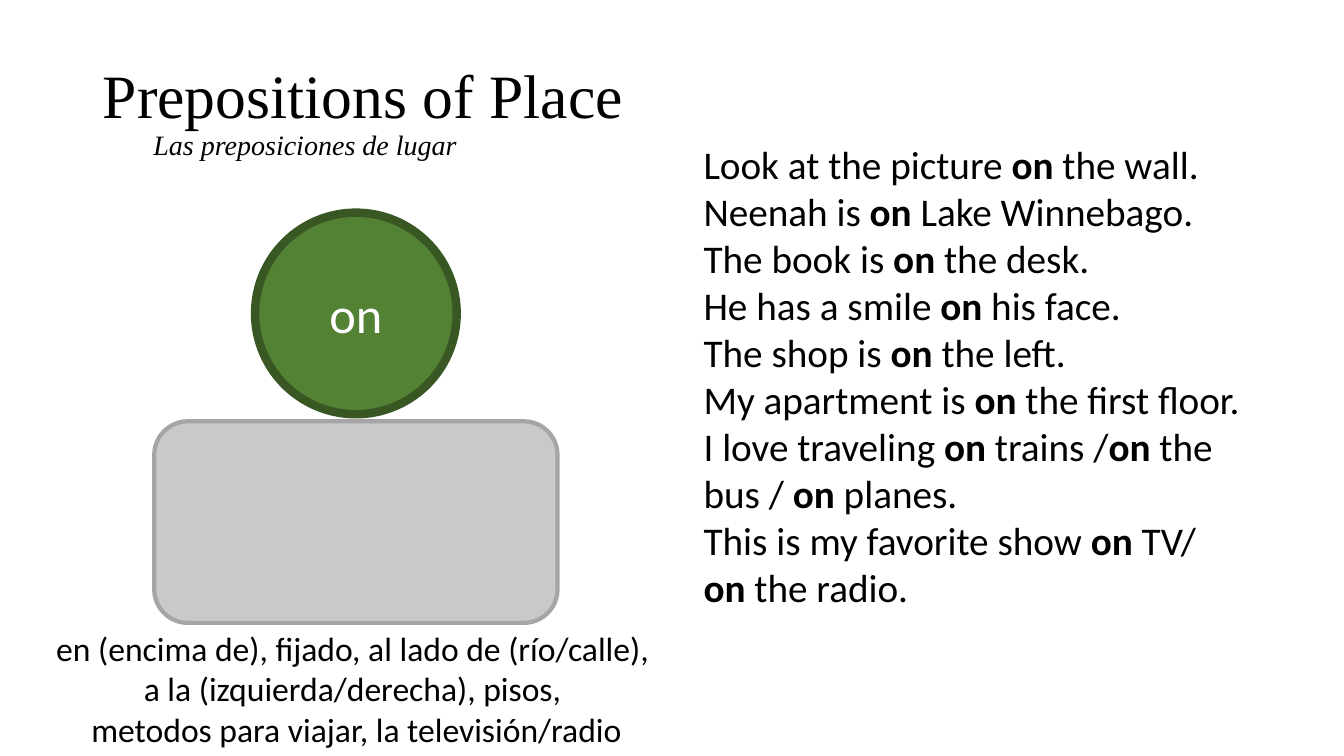
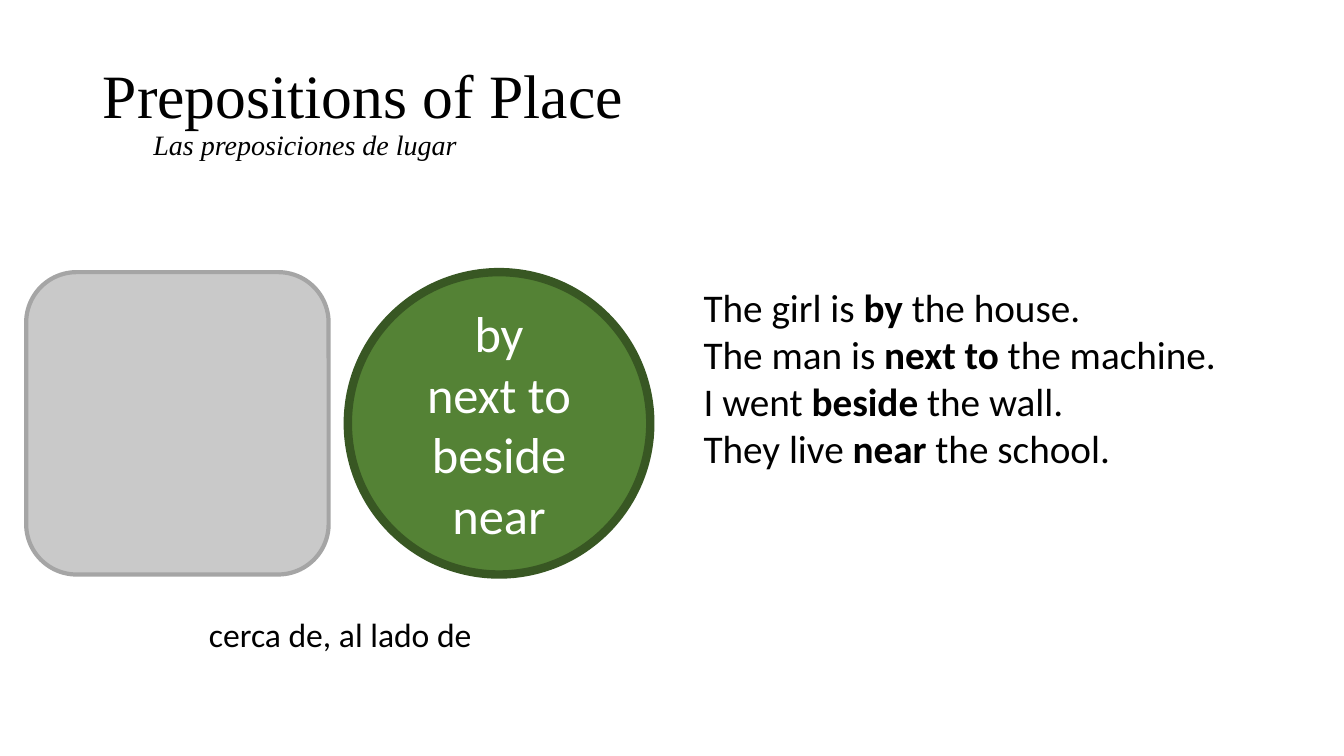
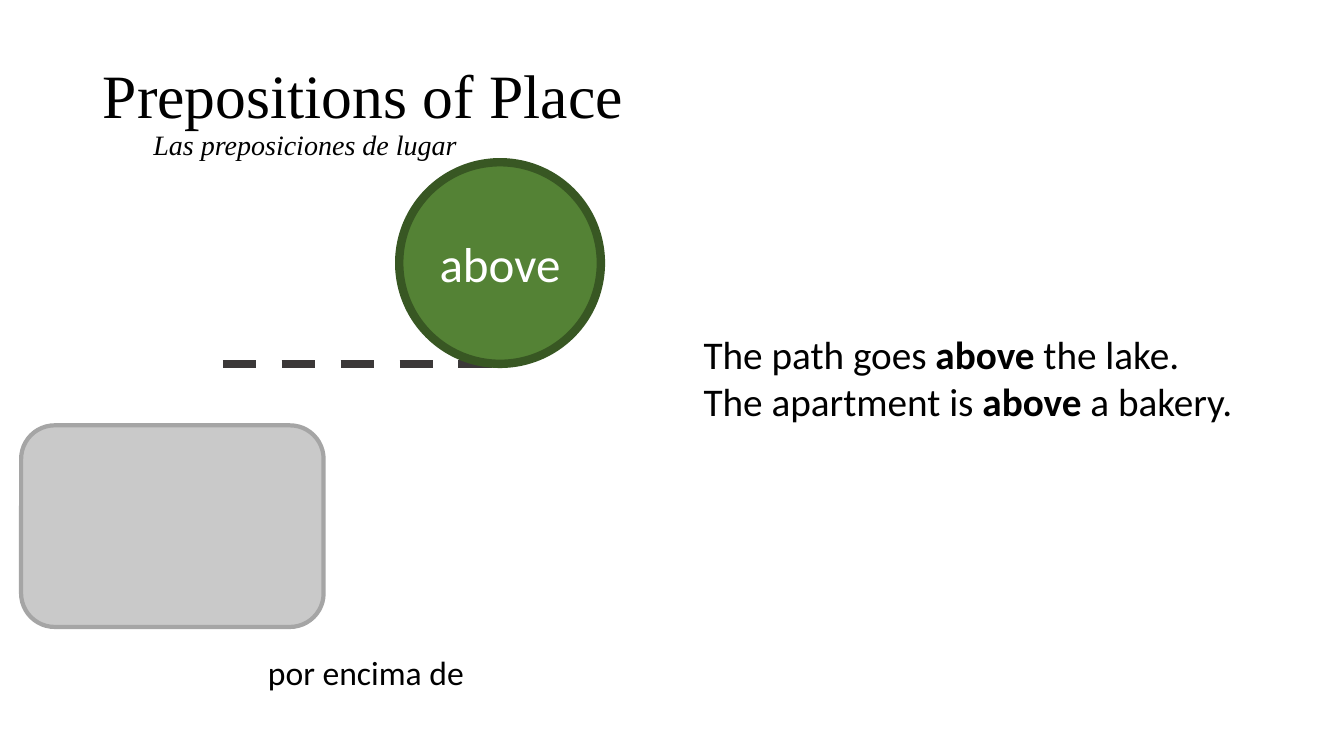
from dataclasses import dataclass

from lxml import etree
from pptx import Presentation
from pptx import util as u
from pptx.dml.color import RGBColor
from pptx.enum import dml, shapes, text
from pptx.oxml import ns

Inches = u.Inches


@dataclass(frozen=True)
class Theme:
    black: str = "000000"
    white: str = "FFFFFF"
    gray: str = "C9C9C9"
    gray_edge: str = "A5A5A5"
    green: str = "548235"
    green_edge: str = "385723"
    dash: str = "3B3838"
    title_font: str = "Times New Roman"
    body_font: str = "Calibri"
    title: int = 44
    subtitle: int = 20
    word: int = 36
    examples: int = 28
    caption: int = 24
    thin: int = 3
    thick: int = 6


@dataclass(frozen=True)
class Box:
    left: float
    top: float
    width: float
    height: float

    def emu(self) -> list[int]:
        return [Inches(v) for v in (self.left, self.top, self.width, self.height)]


@dataclass(frozen=True)
class Lesson:
    word: str
    block: Box
    circle: Box
    examples: list[str]
    examples_top: float
    examples_height: float
    caption: list[str]
    caption_box: Box
    word_size: int = Theme.word
    dash: tuple[float, float, float] | None = None


THEME = Theme()
TITLE_BOX = Box(0.92, 0.4, 11.5, 1.45)
EXAMPLES_LEFT, EXAMPLES_WIDTH = 6.88, 5.53

LESSONS = [
    Lesson(
        word="on",
        block=Box(1.53, 4.18, 4, 2),
        circle=Box(2.53, 2.11, 2, 2),
        examples=[
            "Look at the picture **on** the wall.",
            "Neenah is **on** Lake Winnebago.\nThe book is **on** the desk.",
            "He has a smile **on** his face.",
            "The shop is **on** the left.",
            "My apartment is** on** the first floor.",
            "I love traveling **on** trains /**on** the bus / **on** planes.",
            "This is my favorite show **on** TV/ **on** the radio.",
        ],
        examples_top=1.34,
        examples_height=4.81,
        caption=[
            "en (encima de), fijado, al lado de (río/calle), ",
            "a la (izquierda/derecha), pisos, ",
            "metodos para viajar, la televisión/radio",
        ],
        caption_box=Box(0.43, 6.18, 6.21, 1.31),
    ),
    Lesson(
        word="by\nnext to\nbeside\nnear",
        block=Box(0.26, 2.7, 3, 3),
        circle=Box(3.45, 2.7, 3, 3),
        examples=[
            "The girl is **by **the house.",
            "The man is **next to** the machine.",
            "I went **beside** the wall.",
            "They live **near** the school.",
        ],
        examples_top=2.76,
        examples_height=1.99,
        caption=["cerca de, al lado de"],
        caption_box=Box(1.96, 6.04, 2.83, 0.5),
    ),
    Lesson(
        word="above",
        block=Box(0.21, 4.22, 3, 2),
        circle=Box(3.96, 1.61, 2, 2),
        examples=[
            "The path goes **above** the lake.",
            "The apartment is **above** a bakery.",
        ],
        examples_top=3.23,
        examples_height=1.04,
        caption=["por encima de"],
        caption_box=Box(2.55, 6.42, 2.16, 0.5),
        word_size=35,
        dash=(2.21, 5.04, 3.61),
    ),
]


def write(p, content: str, *, size: int, color: str = THEME.black,
          font: str = THEME.body_font, italic: bool = False,
          align=text.PP_ALIGN.LEFT) -> None:
    p.alignment = align
    for i, part in enumerate(content.split("**")):
        for j, line in enumerate(part.split("\n")):
            if j:
                p.add_line_break()
            if line:
                r = p.add_run()
                r.text = line
                r.font.size = u.Pt(size)
                r.font.name = font
                r.font.color.rgb = RGBColor.from_string(color)
                r.font.bold = i % 2 == 1
                r.font.italic = italic


def add_title(s) -> None:
    sp = s.shapes.title
    sp.left, sp.top, sp.width, sp.height = TITLE_BOX.emu()
    tf = sp.text_frame
    tf.auto_size = text.MSO_AUTO_SIZE.NONE
    tf.vertical_anchor = text.MSO_ANCHOR.MIDDLE
    p = tf.paragraphs[0]
    p.line_spacing = 0.9
    write(p, "Prepositions of Place\n", size=THEME.title, font=THEME.title_font)
    write(p, "\tLas preposiciones de lugar", size=THEME.subtitle,
          font=THEME.title_font, italic=True)


def add_figure(s, kind, box: Box, fill: str, edge: str, weight: int):
    sp = s.shapes.add_shape(kind, *box.emu())
    sp.shadow.inherit = False
    sp.fill.solid()
    sp.fill.fore_color.rgb = RGBColor.from_string(fill)
    sp.line.color.rgb = RGBColor.from_string(edge)
    sp.line.width = u.Pt(weight)
    return sp


def add_circle(s, lesson: Lesson) -> None:
    sp = add_figure(s, shapes.MSO_SHAPE.OVAL, lesson.circle,
                    THEME.green, THEME.green_edge, THEME.thick)
    tf = sp.text_frame
    tf.vertical_anchor = text.MSO_ANCHOR.MIDDLE
    write(tf.paragraphs[0], lesson.word, size=lesson.word_size,
          color=THEME.white, align=text.PP_ALIGN.CENTER)


def add_textbox(s, box: Box, lines: list[str], *, wrap: bool, **fmt) -> None:
    tf = s.shapes.add_textbox(*box.emu()).text_frame
    tf.word_wrap = wrap
    tf.auto_size = text.MSO_AUTO_SIZE.SHAPE_TO_FIT_TEXT
    for i, line in enumerate(lines):
        p = tf.add_paragraph() if i else tf.paragraphs[0]
        write(p, line, **fmt)


def add_dash(s, start: float, end: float, y: float) -> None:
    line = s.shapes.add_connector(shapes.MSO_CONNECTOR.STRAIGHT,
                                  Inches(start), Inches(y), Inches(end), Inches(y))
    line.line.color.rgb = RGBColor.from_string(THEME.dash)
    line.line.width = u.Pt(THEME.thick)
    line.line.dash_style = dml.MSO_LINE.DASH
    etree.SubElement(line._element.spPr, ns.qn("a:effectLst"))


def add_lesson(prs, lesson: Lesson) -> None:
    s = prs.slides.add_slide(prs.slide_layouts[5])
    add_title(s)
    add_figure(s, shapes.MSO_SHAPE.ROUNDED_RECTANGLE, lesson.block,
               THEME.gray, THEME.gray_edge, THEME.thin)
    if lesson.dash:
        add_dash(s, *lesson.dash)
    add_circle(s, lesson)
    examples_box = Box(EXAMPLES_LEFT, lesson.examples_top,
                       EXAMPLES_WIDTH, lesson.examples_height)
    add_textbox(s, examples_box, lesson.examples, wrap=True, size=THEME.examples)
    add_textbox(s, lesson.caption_box, lesson.caption, wrap=False,
                size=THEME.caption, align=text.PP_ALIGN.CENTER)


def main() -> None:
    prs = Presentation()
    prs.slide_width, prs.slide_height = Inches(13.33), Inches(7.5)
    for lesson in LESSONS:
        add_lesson(prs, lesson)
    prs.save("out.pptx")


if __name__ == "__main__":
    main()
